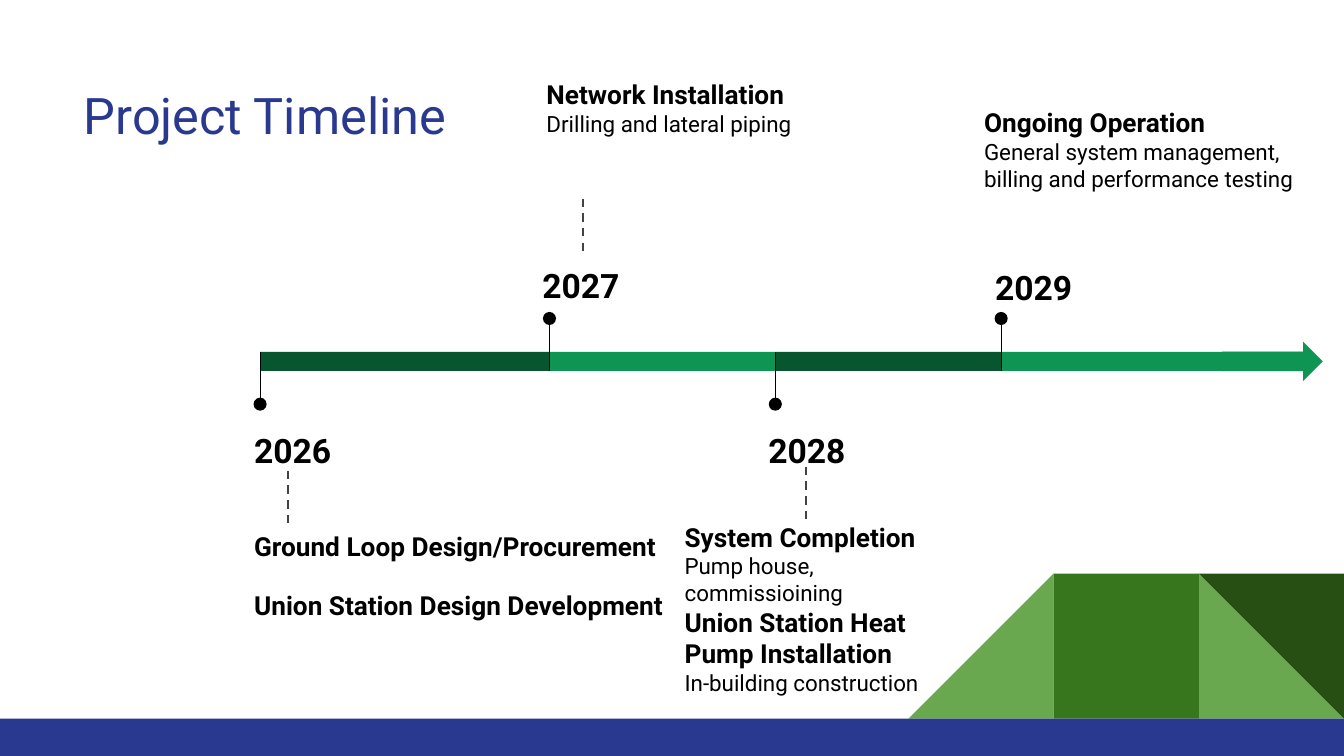
"""Build the project timeline slide."""
from dataclasses import dataclass

from lxml import etree
from pptx import Presentation
from pptx.dml.color import RGBColor
from pptx.enum.dml import MSO_LINE
from pptx.enum.shapes import MSO_CONNECTOR, MSO_SHAPE
from pptx.enum.text import MSO_ANCHOR, MSO_AUTO_SIZE, PP_ALIGN
from pptx.oxml.ns import qn
from pptx.util import Inches, Pt

RECTANGLE = MSO_SHAPE.RECTANGLE
RIGHT_TRIANGLE = MSO_SHAPE.RIGHT_TRIANGLE
OVAL = MSO_SHAPE.OVAL
RIGHT_ARROW = MSO_SHAPE.RIGHT_ARROW
STRAIGHT = MSO_CONNECTOR.STRAIGHT
DASH = MSO_LINE.DASH
TOP = MSO_ANCHOR.TOP
LEFT = PP_ALIGN.LEFT
NO_AUTOFIT = MSO_AUTO_SIZE.NONE


@dataclass(frozen=True)
class Theme:
    font: str = "Roboto"
    title_size: float = 36
    year_size: float = 24
    heading_size: float = 18.7
    detail_size: float = 16
    navy: str = "2A3990"
    black: str = "000000"
    dash_grey: str = "434343"
    bar_dark: str = "085630"
    bar_light: str = "0E9453"
    corner_light: str = "6AA84F"
    corner_mid: str = "38761D"
    corner_dark: str = "274E13"


@dataclass(frozen=True)
class Box:
    left: float
    top: float
    width: float
    height: float

    def lengths(self) -> list:
        return [Inches(v) for v in (self.left, self.top, self.width, self.height)]


@dataclass(frozen=True)
class Line:
    text: str
    size: float
    bold: bool = True
    before: float = 0
    spacing: float = 1


@dataclass(frozen=True)
class Milestone:
    year: str
    start: float
    end: float
    color: str
    above: bool
    year_box: Box
    work_box: Box
    work: tuple
    inset: float = 0
    dash: tuple = ()


@dataclass(frozen=True)
class CornerPiece:
    kind: int
    column: int
    color: str
    rotation: float = 0
    flipped: bool = False


THEME = Theme()
BAR_TOP, BAR_HEIGHT = 3.49, 0.19
PIN_LENGTH, DOT, DASH_LENGTH = 0.52, 0.13, 0.54
CORNER_LEFT, CORNER_TOP, CORNER_SIZE = 9.01, 5.69, 1.44


def heading(text: str, before: float = 0) -> Line:
    return Line(text, THEME.heading_size, before=before)


def detail(text: str) -> Line:
    return Line(text, THEME.detail_size, bold=False)


MILESTONES = (
    Milestone("2026", 2.58, 5.45, THEME.bar_dark, False,
              Box(2.52, 4.2, 1.26, 0.39), Box(2.52, 5.26, 4.28, 0.58),
              (heading("Ground Loop Design/Procurement"),
               heading("Union Station Design Development", before=19.5)),
              dash=(2.86, 4.67)),
    Milestone("2027", 5.45, 7.69, THEME.bar_light, True,
              Box(5.38, 2.57, 1.42, 0.4), Box(5.42, 0.78, 3.8, 1.13),
              (heading("Network Installation"),
               detail("Drilling and lateral piping")),
              dash=(5.78, 1.97)),
    Milestone("2028", 7.69, 9.93, THEME.bar_dark, False,
              Box(7.62, 4.2, 2.24, 0.39), Box(6.79, 5.17, 2.88, 0.67),
              (heading("System Completion"),
               detail("Pump house, commissioining"),
               heading("Union Station Heat Pump Installation"),
               detail("In-building construction")),
              dash=(7.99, 4.63)),
    Milestone("2029", 9.93, 13.0, THEME.bar_light, True,
              Box(9.87, 2.59, 1.56, 0.4), Box(9.63, 0.93, 3.49, 1.5),
              (heading("Ongoing Operation"),
               detail("General system management, billing and performance testing")),
              inset=0.13),
)

CORNER = (
    CornerPiece(RIGHT_TRIANGLE, 2, THEME.corner_light),
    CornerPiece(RIGHT_TRIANGLE, 0, THEME.corner_light, flipped=True),
    CornerPiece(RECTANGLE, 1, THEME.corner_mid),
    CornerPiece(RIGHT_TRIANGLE, 2, THEME.corner_dark, rotation=180),
)


def add_block(slide, kind: int, box: Box, color: str):
    block = slide.shapes.add_shape(kind, *box.lengths())
    block.shadow.inherit = False
    block.fill.solid()
    block.fill.fore_color.rgb = RGBColor.from_string(color)
    block.line.fill.background()
    return block


def add_vertical(slide, x: float, top: float, length: float, color: str, width: float):
    rule = slide.shapes.add_connector(
        STRAIGHT, Inches(x), Inches(top), Inches(x), Inches(top + length))
    rule.line.color.rgb = RGBColor.from_string(color)
    rule.line.width = Pt(width)
    etree.SubElement(rule.element.spPr, qn("a:effectLst"))
    return rule


def format_run(run, size: float, color: str, bold: bool) -> None:
    run.font.name = THEME.font
    run.font.size = Pt(size)
    run.font.bold = bold
    run.font.color.rgb = RGBColor.from_string(color)


def add_lines(slide, box: Box, lines: tuple, inset: float = 0) -> None:
    frame = slide.shapes.add_textbox(*box.lengths()).text_frame
    frame.word_wrap = True
    frame.margin_left = frame.margin_right = Inches(inset)
    frame.margin_top = frame.margin_bottom = Inches(inset)
    frame.text = "\n".join(line.text for line in lines)
    for paragraph, line in zip(frame.paragraphs, lines):
        paragraph.line_spacing = line.spacing
        if line.before:
            paragraph.space_before = Pt(line.before)
        format_run(paragraph.runs[0], line.size, THEME.black, line.bold)


def add_title(slide, text: str, box: Box) -> None:
    title = slide.shapes.title
    title.left, title.top, title.width, title.height = box.lengths()
    frame = title.text_frame
    frame.text = text
    frame.word_wrap = True
    frame.auto_size = NO_AUTOFIT
    frame.vertical_anchor = TOP
    frame.paragraphs[0].alignment = LEFT
    format_run(frame.paragraphs[0].runs[0], THEME.title_size, THEME.navy, False)


def add_corner(slide) -> None:
    for piece in CORNER:
        left = CORNER_LEFT + piece.column * CORNER_SIZE
        block = add_block(slide, piece.kind,
                          Box(left, CORNER_TOP, CORNER_SIZE, CORNER_SIZE), piece.color)
        block.rotation = piece.rotation
        if piece.flipped:
            block.element.spPr.xfrm.set("flipH", "1")
    add_block(slide, RECTANGLE, Box(0, 7.13, 13.33, 0.37), THEME.navy)


def add_milestone(slide, stone: Milestone) -> None:
    pin_top = BAR_TOP + BAR_HEIGHT - PIN_LENGTH if stone.above else BAR_TOP
    dot_center = pin_top if stone.above else pin_top + PIN_LENGTH
    add_vertical(slide, stone.start, pin_top, PIN_LENGTH, THEME.black, 0.75)
    add_block(slide, OVAL, Box(stone.start - DOT / 2, dot_center - DOT / 2, DOT, DOT),
              THEME.black)
    add_lines(slide, stone.year_box, (Line(stone.year, THEME.year_size, spacing=1.15),))
    add_lines(slide, stone.work_box, stone.work, stone.inset)
    if stone.dash:
        rule = add_vertical(slide, *stone.dash, DASH_LENGTH, THEME.dash_grey, 1.5)
        rule.line.dash_style = DASH


def main() -> None:
    deck = Presentation()
    deck.slide_width, deck.slide_height = Inches(13.33), Inches(7.5)
    slide = deck.slides.add_slide(deck.slide_layouts[5])
    add_title(slide, "Project Timeline", Box(0.73, 0.78, 4.06, 0.71))
    add_corner(slide)
    for stone in MILESTONES:
        add_block(slide, RECTANGLE,
                  Box(stone.start, BAR_TOP, stone.end - stone.start, BAR_HEIGHT), stone.color)
    add_block(slide, RIGHT_ARROW, Box(12.12, 3.39, 1, 0.39), THEME.bar_light)
    for stone in MILESTONES:
        add_milestone(slide, stone)
    deck.save("out.pptx")


if __name__ == "__main__":
    main()
